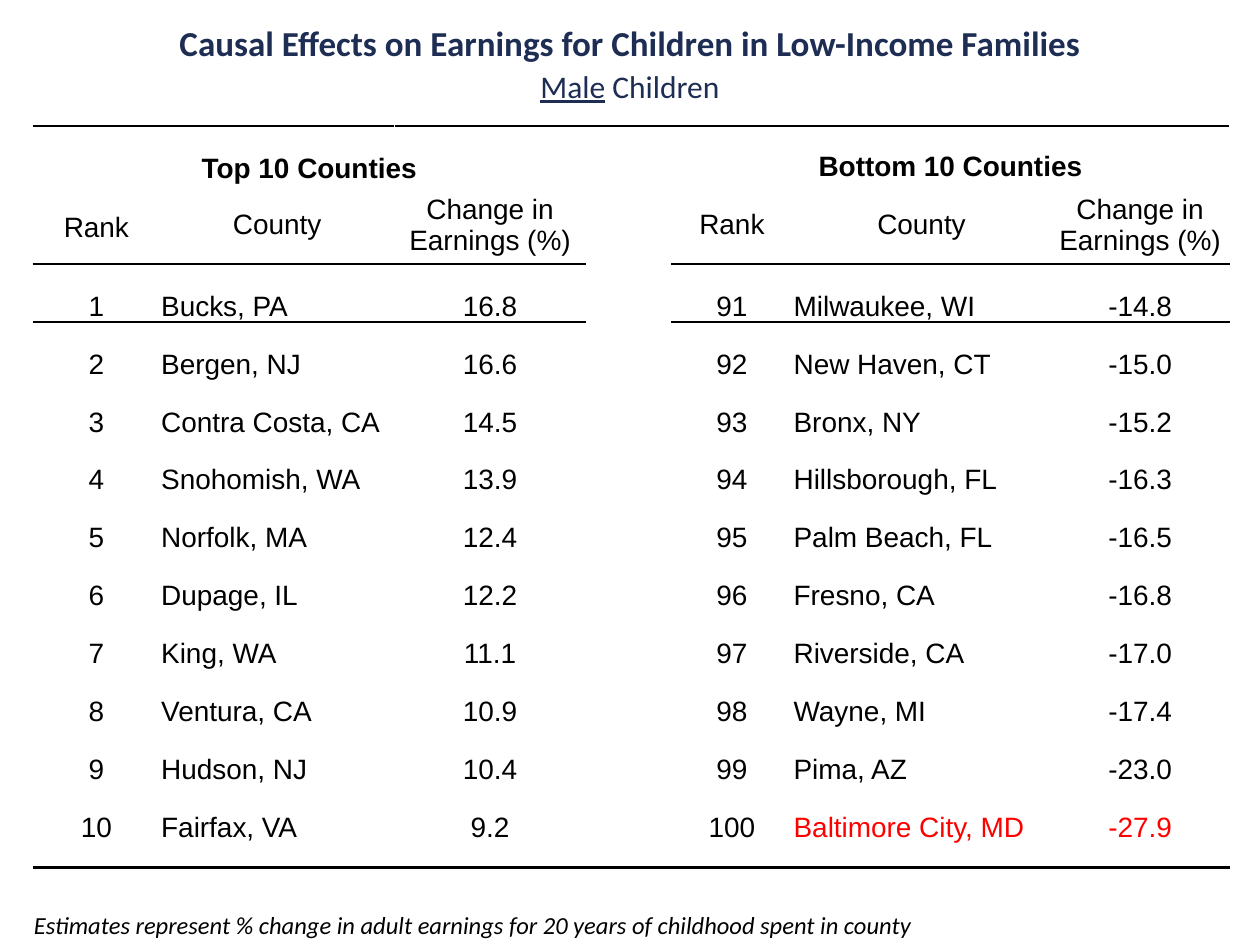
"""Build the slide of county effects on earnings for male children."""
from lxml.etree import SubElement
from pptx import Presentation
from pptx.dml.color import RGBColor
from pptx.enum.text import MSO_ANCHOR, MSO_AUTO_SIZE, PP_ALIGN
from pptx.oxml.ns import qn
from pptx.util import Inches, Pt

NAVY = RGBColor(0x1E, 0x2D, 0x53)
BLACK = RGBColor(0, 0, 0)
WHITE = RGBColor(255, 255, 255)
RED = RGBColor(255, 0, 0)
PLAIN = "{2D5ABB26-0587-4C30-8999-92F81FD0307C}"


def write(para, text, color, **style):
    run = para.add_run()
    run.text = text
    run.font.color.rgb = color
    for key, value in style.items():
        setattr(run.font, key, value)


def rule(cell, side, color, width):
    line = SubElement(cell._tc.get_or_add_tcPr(), qn("a:ln" + side), w=str(Pt(width)))
    fill = SubElement(line, qn("a:solidFill"))
    SubElement(fill, qn("a:srgbClr"), val=str(color))


deck = Presentation()
deck.slide_width, deck.slide_height = Inches(10), Inches(7.5)
slide = deck.slides.add_slide(deck.slide_layouts[6])

big = dict(name="Calibri", size=Pt(20), bold=True)
sub = dict(name="Calibri", size=Pt(18))
small = dict(name="Calibri", size=Pt(14), italic=True)
boxes = [
    ((0, 0.53, 10, 0.3), True, [("Male", NAVY, dict(sub, underline=True)),
                                (" Children", NAVY, sub)]),
    ((0.17, 7.17, 8.25, 0.61), False, [
        ("Estimates represent % change in adult earnings for 20 years "
         "of childhood spent in county", BLACK, small)]),
    ((0, 0.17, 10, 0.34), True, [
        ("Causal Effects on Earnings for Children in Low-Income Families", NAVY, big)]),
]
for place, title, runs in boxes:
    frame = slide.shapes.add_textbox(*map(Inches, place)).text_frame
    form = dict(word_wrap=True, auto_size=MSO_AUTO_SIZE.SHAPE_TO_FIT_TEXT)
    if title:
        form.update(margin_left=0, margin_top=0, margin_right=0, margin_bottom=0)
    for key, value in form.items():
        setattr(frame, key, value)
    para = frame.paragraphs[0]
    para.alignment = PP_ALIGN.CENTER if title else PP_ALIGN.LEFT
    for text, color, style in runs:
        write(para, text, color, **style)

top = [("Bucks, PA", "16.8"), ("Bergen, NJ", "16.6"), ("Contra Costa, CA", "14.5"),
       ("Snohomish, WA", "13.9"), ("Norfolk, MA", "12.4"), ("Dupage, IL", "12.2"),
       ("King, WA", "11.1"), ("Ventura, CA", "10.9"), ("Hudson, NJ", "10.4"),
       ("Fairfax, VA", "9.2")]
low = [("Milwaukee, WI", "-14.8"), ("New Haven, CT", "-15.0"), ("Bronx, NY", "-15.2"),
       ("Hillsborough, FL", "-16.3"), ("Palm Beach, FL", "-16.5"), ("Fresno, CA", "-16.8"),
       ("Riverside, CA", "-17.0"), ("Wayne, MI", "-17.4"), ("Pima, AZ", "-23.0"),
       ("Baltimore City, MD", "-27.9")]
head = ["Rank", "County", "Change in Earnings (%)"]
blank = [""] * 7
rows = [blank, ["Top 10 Counties", "", "", "", "Bottom 10 Counties", "", ""],
        head + [""] + head]
for rank, (good, bad) in enumerate(zip(top, low), 1):
    rows.append([str(rank), *good, "", str(rank + 90), *bad])
rows.append(blank)

wide = [1.01, 1.86, 1.52, 0.68, 0.96, 2.05, 1.42]
high = [0.17, 0.28, 0.62] + [0.46] * 10 + [0.19]
last = len(rows) - 1
shape = slide.shapes.add_table(len(rows), len(wide), Inches(0.26), Inches(1),
                               Inches(9.49), Inches(5.91))
table = shape.table
table.first_row = table.horz_banding = False
table._tbl.tblPr.find(qn("a:tableStyleId")).text = PLAIN
for col, width in zip(table.columns, wide):
    col.width = Inches(width)
for row, height in zip(table.rows, high):
    row.height = Inches(height)
for row, start, end in [(0, 0, 1), (0, 2, 6), (1, 0, 2), (1, 4, 6)]:
    table.cell(row, start).merge(table.cell(row, end))

for i, row in enumerate(rows):
    for j, text in enumerate(row):
        cell = table.cell(i, j)
        body = 2 < i < last
        side = 0.01 if body else 0.06
        form = dict(margin_left=Inches(side), margin_right=Inches(side),
                    margin_top=Inches(0.01 if body else 0), margin_bottom=0,
                    vertical_anchor=MSO_ANCHOR.BOTTOM if body else MSO_ANCHOR.MIDDLE)
        for key, value in form.items():
            setattr(cell, key, value)
        if i == 0 and j in (0, 2):
            rule(cell, "L", WHITE, 1)
            rule(cell, "R", WHITE, 1)
        if i == 0:
            rule(cell, "T", BLACK, 1.5)
        if i == 3 and j != 3:
            rule(cell, "T", BLACK, 1)
        if i == last or i == 2 and j != 3:
            rule(cell, "B", BLACK, 1.5 if i == last else 1)
        cell.fill.solid()
        cell.fill.fore_color.rgb = WHITE
        para = cell.text_frame.paragraphs[0]
        if not text:
            para.font.size = Pt(8)
            continue
        para.alignment = PP_ALIGN.LEFT if body and j in (1, 5) else PP_ALIGN.CENTER
        if i in (1, 2) and j == 0:
            para.line_spacing = 1.15
        color = RED if i == last - 1 and j > 4 else BLACK
        write(para, text, color, name="Arial", size=Pt(16), bold=i == 1)

deck.save("out.pptx")
